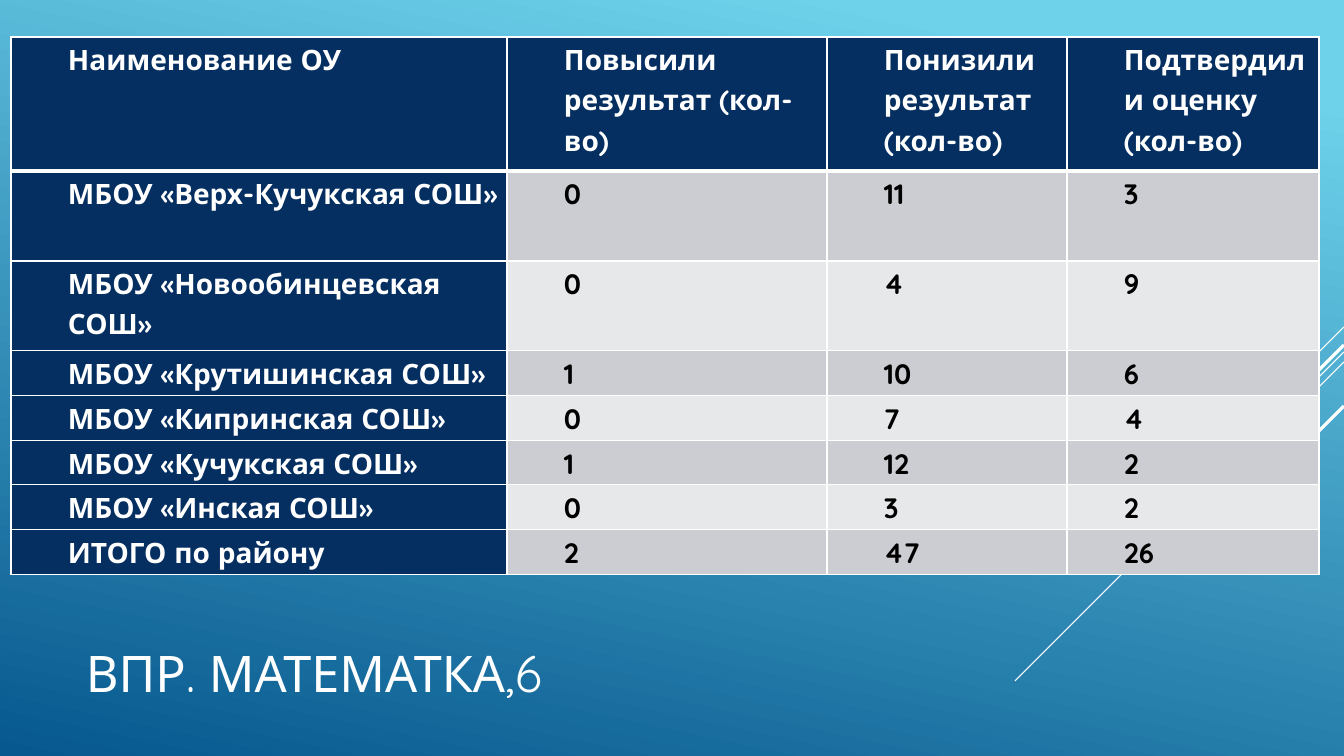
import pptx
import pptx.dml.color
import pptx.enum.shapes
import pptx.enum.text
import pptx.oxml
import pptx.oxml.ns
import pptx.util

# Content
TITLE = "ВПР. МАТЕМАТКА,6"
ROWS = [
    ("Наименование ОУ", "Повысили результат (кол-во)",
     "Понизили результат\n(кол-во)", "Подтвердили оценку\n(кол-во)"),
    ("МБОУ «Верх-Кучукская СОШ»", "0", "11", "3"),
    ("МБОУ «Новообинцевская СОШ»", "0", "4", "9"),
    ("МБОУ «Крутишинская СОШ»", "1", "10", "6"),
    ("МБОУ «Кипринская СОШ»", "0", "7", "4"),
    ("МБОУ «Кучукская СОШ»", "1", "12", "2"),
    ("МБОУ «Инская СОШ»", "0", "3", "2"),
    ("ИТОГО по району", "2", "47", "26"),
]

# Layout in px, style
WIDTH, HEIGHT = 1344, 756
COL_WIDTHS = [496, 320, 240, 252]
ROW_HEIGHTS = [134, 90, 90, 45, 45, 44, 45, 45]
TABLE_LEFT, TABLE_TOP = 11, 37
TITLE_BOX = (76, 600, 940, 144)
# Diagonals: y at the right edge, horizontal run, width in points
DIAGONALS = [(327, 101, 0.75), (352, 329, 0.75), (362, 209, 0.75),
             (345, 193, 2.25), (406, 140, 2.25)]
FONT = "Quicksand"
WHITE, BLACK, NAVY = "FFFFFF", "000000", "052F61"
BANDS = ["E7E8EA", "CCCDD2"]
BACKGROUND = [(0.1, "6ED2EB"), (1, "06588E")]


def px(n):
    return pptx.util.Emu(round(n * 914400 / 100.8))


def rgb(color):
    return pptx.dml.color.RGBColor.from_string(color)


def add_run(p, text, size, color, bold=False):
    r = p.add_run()
    r.text = text
    r.font.name = FONT
    r.font.size = pptx.util.Pt(size)
    r.font.bold = bold
    r.font.color.rgb = rgb(color)


def set_borders(cell, widths):
    """Give the left, right, top and bottom edges their widths in points."""
    tc_pr = cell._tc.get_or_add_tcPr()
    for i, (side, width) in enumerate(zip("LRTB", widths)):
        tc_pr.insert(i, pptx.oxml.parse_xml(
            f'<a:ln{side} {pptx.oxml.ns.nsdecls("a")} w="{pptx.util.Pt(width)}">'
            f'<a:solidFill><a:srgbClr val="{WHITE}"/></a:solidFill></a:ln{side}>'))


def fill_cell(cell, text, row, col):
    dark = row == 0 or col == 0
    cell.fill.solid()
    cell.fill.fore_color.rgb = rgb(NAVY if dark else BANDS[row % 2])
    set_borders(cell, (1, 1, 3 if row == 1 else 1, 3 if row == 0 else 1))
    cell.margin_left = cell.margin_right = px(7)
    cell.margin_top = cell.margin_bottom = 0
    tf = cell.text_frame
    for i, line in enumerate(text.split("\n")):
        p = tf.add_paragraph() if i else tf.paragraphs[0]
        p.line_spacing = 1.15
        p._p.get_or_add_pPr().set("marL", str(px(50)))
        add_run(p, line, 20, WHITE if dark else BLACK, bold=True)


def add_diagonal(s, y, run, width):
    line = s.shapes.add_connector(pptx.enum.shapes.MSO_CONNECTOR.STRAIGHT,
                                  px(WIDTH), px(y), px(WIDTH - run), px(y + run))
    line.line.color.rgb = rgb(WHITE)
    line.line.width = pptx.util.Pt(width)
    line._element.spPr.append(pptx.oxml.parse_xml(
        f'<a:effectLst {pptx.oxml.ns.nsdecls("a")}/>'))


def main():
    prs = pptx.Presentation()
    prs.slide_width, prs.slide_height = px(WIDTH), px(HEIGHT)
    s = prs.slides.add_slide(prs.slide_layouts[6])

    # Background gradient
    fill = s.background.fill
    fill.gradient()
    fill.gradient_angle = 258
    for stop, (position, color) in zip(fill.gradient_stops, BACKGROUND):
        stop.position = position
        stop.color.rgb = rgb(color)

    # Diagonal lines
    for diagonal in DIAGONALS:
        add_diagonal(s, *diagonal)

    # Title
    sp = s.shapes.add_textbox(*map(px, TITLE_BOX))
    tf = sp.text_frame
    tf.word_wrap = True
    tf.vertical_anchor = pptx.enum.text.MSO_ANCHOR.MIDDLE
    add_run(tf.paragraphs[0], TITLE, 36, WHITE)

    # Results table
    table = s.shapes.add_table(
        len(ROWS), len(COL_WIDTHS), px(TABLE_LEFT), px(TABLE_TOP),
        px(sum(COL_WIDTHS)), px(sum(ROW_HEIGHTS))).table
    for column, width in zip(table.columns, COL_WIDTHS):
        column.width = px(width)
    for row, height in zip(table.rows, ROW_HEIGHTS):
        row.height = px(height)
    for i, values in enumerate(ROWS):
        for j, text in enumerate(values):
            fill_cell(table.cell(i, j), text, i, j)

    prs.save("out.pptx")


if __name__ == "__main__":
    main()
